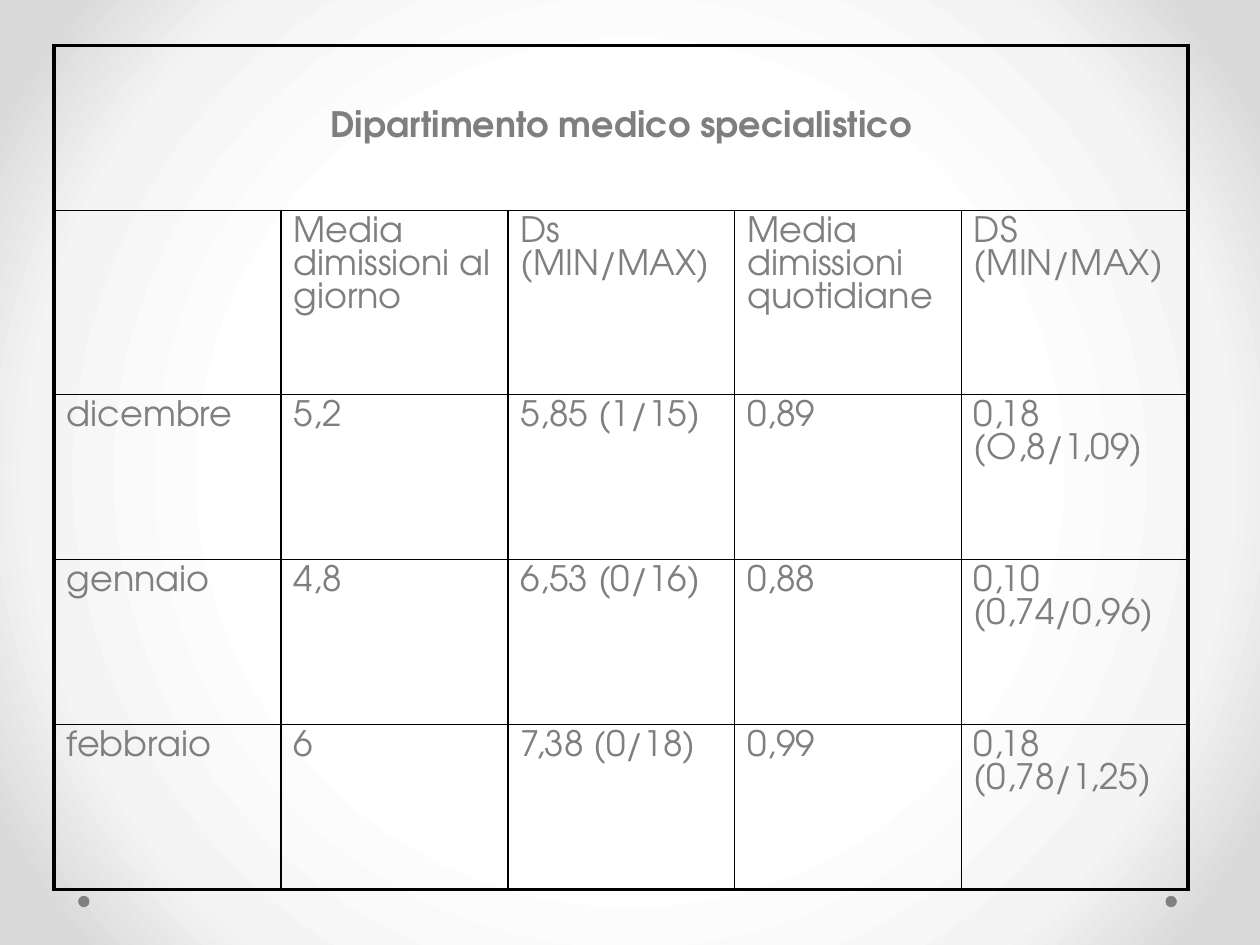
from lxml.etree import SubElement
from pptx import Presentation
from pptx.dml.color import RGBColor
from pptx.enum.shapes import MSO_SHAPE as Shape
from pptx.enum.text import MSO_ANCHOR as Anchor, PP_ALIGN as Align
from pptx.oxml import parse_xml
from pptx.oxml.ns import nsdecls, qn
from pptx.util import Inches, Pt

BLACK = RGBColor(0x00, 0x00, 0x00)
TEXT_GRAY = RGBColor(0x7F, 0x7F, 0x7F)
DOT_GRAY = RGBColor(0x80, 0x80, 0x80)
WHITE = RGBColor(0xFF, 0xFF, 0xFF)
PALE_GRAY = RGBColor(0xF4, 0xF4, 0xF4)
EDGE_GRAY = RGBColor(0xDA, 0xDA, 0xDA)

FONT = {"name": "TeX Gyre Adventor", "size": Pt(20)}
SPACING = {"line_spacing": Pt(18.7), "space_before": Pt(4)}
THIN, THICK = Pt(1), Pt(2.25)

TITLE = "Dipartimento medico specialistico"
ROWS = [
    ["", "Media dimissioni al giorno", "Ds (MIN/MAX)",
     "Media dimissioni quotidiane", "DS (MIN/MAX)"],
    ["dicembre", "5,2", "5,85 (1/15)", "0,89", "0,18 (O,8/1,09)"],
    ["gennaio", "4,8", "6,53 (0/16)", "0,88", "0,10 (0,74/0,96)"],
    ["febbraio", "6", "7,38 (0/18)", "0,99", "0,18 (0,78/1,25)"],
]
ROW_HEIGHTS = [1.31, 1.46, 1.31, 1.31, 1.31]


def set_background(page):
    """Radial gradient, white in the middle and gray at the corners."""
    stops = "".join(
        f'<a:gs pos="{share * 1000}"><a:srgbClr val="{color}"/></a:gs>'
        for share, color in [(50, WHITE), (76, PALE_GRAY), (92, EDGE_GRAY)])
    background = parse_xml(
        f'<p:bg {nsdecls("p", "a")}><p:bgPr><a:gradFill rotWithShape="1">'
        f'<a:gsLst>{stops}</a:gsLst><a:path path="circle">'
        '<a:fillToRect l="50000" t="50000" r="50000" b="50000"/></a:path>'
        '</a:gradFill><a:effectLst/></p:bgPr></p:bg>')
    page.element.cSld.insert(0, background)


def add_dots(page, lefts, top, size):
    for left in lefts:
        dot = page.shapes.add_shape(Shape.OVAL, *map(Inches, (left, top, size, size)))
        dot.shadow.inherit = False
        dot.fill.solid()
        dot.fill.fore_color.rgb = DOT_GRAY
        dot.line.fill.background()


def set_borders(cell, widths):
    properties = cell._tc.get_or_add_tcPr()
    for side, width in widths.items():
        line = SubElement(properties, qn(f"a:ln{side}"), w=str(int(width)))
        fill = SubElement(line, qn("a:solidFill"))
        SubElement(fill, qn("a:srgbClr"), val=str(BLACK))


def write_cell(cell, text, bold=False, align=Align.LEFT):
    para = cell.text_frame.paragraphs[0]
    para.alignment = align
    for name, value in SPACING.items():
        setattr(para, name, value)
    span = para.add_run()
    span.text = text
    for name, value in {**FONT, "bold": bold}.items():
        setattr(span.font, name, value)
    span.font.color.rgb = TEXT_GRAY


def add_discharge_table(page, left, top, width):
    row_count, column_count = len(ROW_HEIGHTS), len(ROWS[0])
    box = page.shapes.add_table(row_count, column_count, *map(
        Inches, (left, top, width, sum(ROW_HEIGHTS))))
    table = box.table
    table.first_row = table.horz_banding = False
    for column in table.columns:
        column.width = Inches(width / column_count)
    for row, height in zip(table.rows, ROW_HEIGHTS):
        row.height = Inches(height)

    # Thick frame outside, thin lines inside
    for r in range(row_count):
        for c in range(column_count):
            cell = table.cell(r, c)
            outer = {"L": c == 0, "R": c == column_count - 1 or r == 0,
                     "T": r == 0, "B": r == row_count - 1}
            set_borders(cell, {side: THICK if edge else THIN
                               for side, edge in outer.items()})
            cell.fill.background()

    # Title across all columns
    title = table.cell(0, 0)
    title.merge(table.cell(0, column_count - 1))
    title.vertical_anchor = Anchor.MIDDLE
    write_cell(title, TITLE, bold=True, align=Align.CENTER)

    # Headings and months
    for r, values in enumerate(ROWS, start=1):
        for c, text in enumerate(values):
            if text:
                write_cell(table.cell(r, c), text)


def main():
    deck = Presentation()
    deck.slide_width, deck.slide_height = Inches(10), Inches(7.5)
    page = deck.slides.add_slide(deck.slide_layouts[6])
    set_background(page)
    add_dots(page, lefts=(9.25, 0.62), top=7.11, size=0.09)
    add_discharge_table(page, left=0.43, top=0.36, width=9)
    deck.save("out.pptx")


if __name__ == "__main__":
    main()
